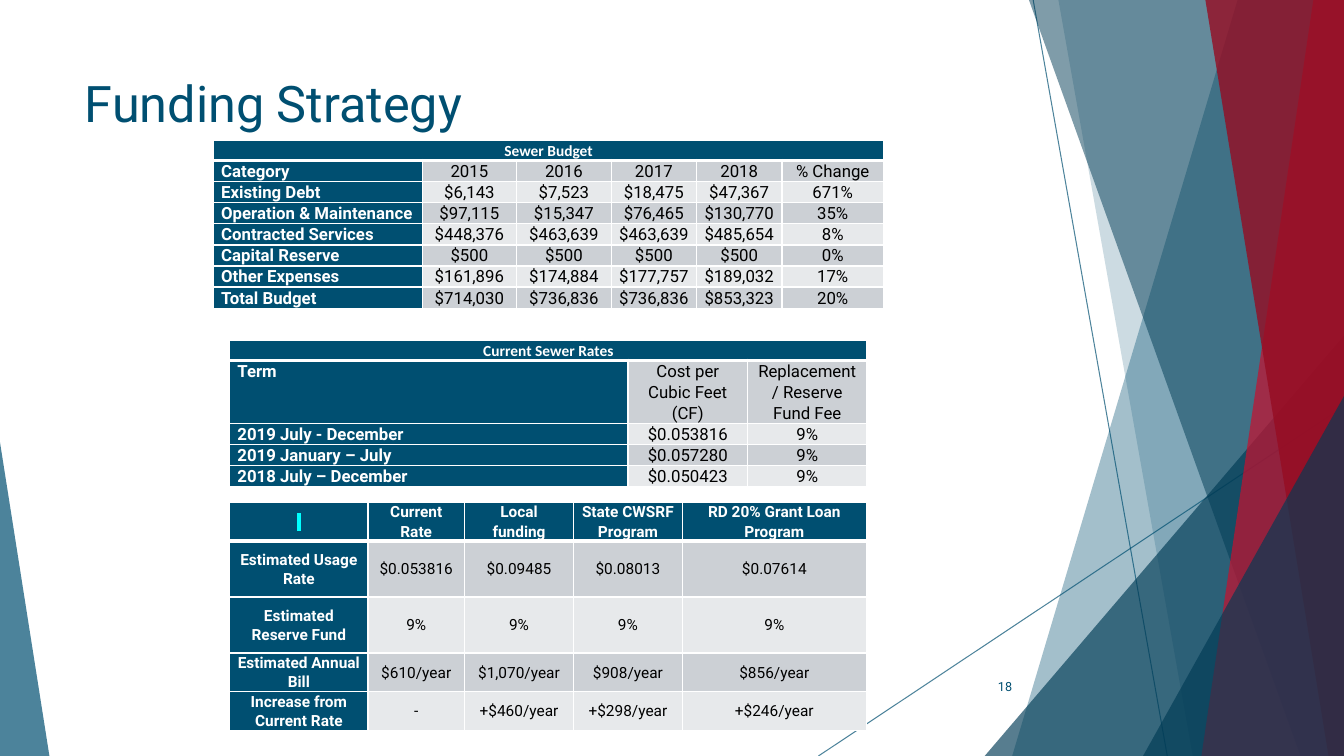
from lxml.etree import SubElement
from pptx import Presentation
from pptx.dml.color import RGBColor
from pptx.enum.shapes import MSO_CONNECTOR, MSO_SHAPE
from pptx.enum.text import MSO_ANCHOR, PP_ALIGN
from pptx.oxml.ns import qn
from pptx.util import Pt

COLORS = {
    "blue": "004F71", "navy": "003B55", "red": "C8102E", "crimson": "960C22",
    "white": "FFFFFF", "black": "000000", "gray": "CCD0D5", "pale": "E7E9EB",
    "cyan": "00FFFF",
}
WIDTH, HEIGHT = 960, 540

RIBBONS = [
    ([(161, 0), (237, 0), (237, 540), (0, 540)], 723, "blue", 36),
    ([(0, 0), (204, 0), (204, 540), (96, 540)], 756, "blue", 20),
    ((703.4, 239.8, 256.6, 300.2), 1, "navy", 66),
    ([(0, 0), (225, 0), (225, 540), (194.5, 540)], 735, "navy", 50),
    ([(80, 0), (101.8, 0), (101.8, 540), (0, 540)], 858.2, "red", 70),
    ([(0, 0), (99, 0), (99, 540), (88, 540)], 861, "crimson", 80),
    ((816.5, 283, 143.5, 257), 1, "navy", 66),
    ((0, 316, 35.3, 224), 0, "blue", 70),
]
RAYS = [((738, 0), (833.8, 540)), ((960, 290.2), (584.6, 540))]

BUDGET = [
    ["Sewer Budget"],
    ["Category", "2015", "2016", "2017", "2018", "% Change"],
    ["Existing Debt", "$6,143", "$7,523", "$18,475", "$47,367", "671%"],
    ["Operation & Maintenance", "$97,115", "$15,347", "$76,465", "$130,770", "35%"],
    ["Contracted Services", "$448,376", "$463,639", "$463,639", "$485,654", "8%"],
    ["Capital Reserve", "$500", "$500", "$500", "$500", "0%"],
    ["Other Expenses", "$161,896", "$174,884", "$177,757", "$189,032", "17%"],
    ["Total Budget", "$714,030", "$736,836", "$736,836", "$853,323", "20%"],
]
RATES = [
    ["Current Sewer Rates"],
    ["Term", "Cost per Cubic Feet (CF)", "Replacement/ Reserve Fund Fee"],
    ["2019 July - December", "$0.053816", "9%"],
    ["2019 January – July", "$0.057280", "9%"],
    ["2018 July – December", "$0.050423", "9%"],
]
OPTIONS = [
    [" ", "Current Rate", "Local funding", "State CWSRF Program",
     "RD 20% Grant Loan Program"],
    ["Estimated Usage Rate", "$0.053816", "$0.09485", "$0.08013", "$0.07614"],
    ["Estimated Reserve Fund", "9%", "9%", "9%", "9%"],
    ["Estimated Annual Bill", "$610/year", "$1,070/year", "$908/year", "$856/year"],
    ["Increase from Current Rate", "-", "+$460/year", "+$298/year", "+$246/year"],
]


def rgb(color):
    return RGBColor.from_string(COLORS[color])


def write(frame, text, size=12, font="Roboto", color="blue", bold=False,
          align=PP_ALIGN.LEFT, anchor=MSO_ANCHOR.TOP, spacing=None, highlight=None):
    frame.word_wrap = True
    frame.vertical_anchor = anchor
    paragraph = frame.paragraphs[0]
    paragraph.alignment = align
    if spacing:
        paragraph.line_spacing = spacing
    run = paragraph.add_run()
    run.text = text
    run.font.size = Pt(size)
    run.font.bold = bold
    run.font.color.rgb = rgb(color)
    if highlight:
        marker = SubElement(run.font._element, qn("a:highlight"))
        SubElement(marker, qn("a:srgbClr"), val=COLORS[highlight])
    run.font.name = font


def set_alpha(fill_owner, percent):
    tint = next(fill_owner.iter(qn("a:srgbClr")))
    SubElement(tint, qn("a:alpha"), val=str(percent * 1000))


def draw_backdrop(slide, left, top):
    for start, end in RAYS:
        ray = slide.shapes.add_connector(
            MSO_CONNECTOR.STRAIGHT, Pt(left + start[0]), Pt(top + start[1]),
            Pt(left + end[0]), Pt(top + end[1]))
        ray.line.color.rgb = rgb("blue")
        ray.line.width = Pt(0.75)
        set_alpha(ray._element.spPr, 70)
        SubElement(ray._element.spPr, qn("a:effectLst"))
    for outline, place, color, opacity in RIBBONS:
        if isinstance(outline, list):
            builder = slide.shapes.build_freeform(*outline[0], scale=Pt(1))
            builder.add_line_segments(outline[1:], close=True)
            ribbon = builder.convert_to_shape(Pt(left + place), Pt(top))
        else:
            x, y, width, height = outline
            ribbon = slide.shapes.add_shape(
                MSO_SHAPE.ISOSCELES_TRIANGLE, Pt(left + x), Pt(top + y),
                Pt(width), Pt(height))
            ribbon.adjustments[0] = place
        ribbon.shadow.inherit = False
        ribbon.line.fill.background()
        ribbon.fill.solid()
        ribbon.fill.fore_color.rgb = rgb(color)
        set_alpha(ribbon._element.spPr, opacity)


def place_title(slide, left, top, width, height):
    title = slide.shapes.title
    title.left, title.top = Pt(left), Pt(top)
    title.width, title.height = Pt(width), Pt(height)
    write(title.text_frame, "Funding Strategy", size=36)


def set_borders(cell, top, bottom):
    properties = cell._tc.get_or_add_tcPr()
    for side, weight in (("lnL", 1), ("lnR", 1), ("lnT", top), ("lnB", bottom)):
        border = SubElement(properties, qn(f"a:{side}"), w=str(Pt(weight)))
        fill = SubElement(border, qn("a:solidFill"))
        SubElement(fill, qn("a:srgbClr"), val=COLORS["white"])


def place_table(slide, left, top, widths, heights, rows, size=12,
                label_align=PP_ALIGN.LEFT, anchor=MSO_ANCHOR.TOP):
    table = slide.shapes.add_table(
        len(rows), len(widths), Pt(left), Pt(top),
        Pt(sum(widths)), Pt(sum(heights))).table
    for column, width in zip(table.columns, widths):
        column.width = Pt(width)
    for row, height in zip(table.rows, heights):
        row.height = Pt(height)
    banner = len(rows[0]) == 1
    if banner:
        table.cell(0, 0).merge(table.cell(0, len(widths) - 1))
    for r, entries in enumerate(rows):
        for c in range(len(widths)):
            cell = table.cell(r, c)
            heading = r == 0 or c == 0
            set_borders(cell, 3 if r == 1 else 1, 3 if r == 0 else 1)
            cell.fill.solid()
            cell.fill.fore_color.rgb = rgb(
                "blue" if heading else "gray" if r % 2 else "pale")
            cell.margin_left = cell.margin_right = Pt(5.4)
            cell.margin_top = cell.margin_bottom = 0
            cell.vertical_anchor = anchor
            if c >= len(entries):
                continue
            title_row = banner and r == 0
            write(cell.text_frame, entries[c],
                  size=11 if title_row else size,
                  font="Calibri" if title_row else "Roboto",
                  color="white" if heading else "black", bold=heading,
                  align=label_align if c == 0 and r > 0 else PP_ALIGN.CENTER,
                  anchor=None, spacing=1.07,
                  highlight="cyan" if entries[c] == " " else None)


def place_page_number(slide, left, top, width, height):
    number = slide.shapes.add_textbox(Pt(left), Pt(top), Pt(width), Pt(height))
    write(number.text_frame, "18", size=9, align=PP_ALIGN.RIGHT,
          anchor=MSO_ANCHOR.MIDDLE)


def main():
    deck = Presentation()
    deck.slide_width, deck.slide_height = Pt(WIDTH), Pt(HEIGHT)
    slide = deck.slides.add_slide(deck.slide_layouts[5])
    draw_backdrop(slide, 0, 0)
    place_title(slide, 53.3, 48, 676.8, 104)
    place_table(slide, 152.6, 100.2, [149, 67.5, 67.5, 61, 61, 72.6],
                [14.4] + [15] * 7, BUDGET)
    place_table(slide, 164.2, 243, [284.4, 85.4, 85.4],
                [14.4, 45] + [15] * 3, RATES)
    place_table(slide, 164.2, 358.8, [98.6, 69.1, 77.8, 77.8, 131.4],
                [27.6, 40, 40, 27.6, 27.6], OPTIONS, size=11,
                label_align=PP_ALIGN.CENTER, anchor=MSO_ANCHOR.MIDDLE)
    place_page_number(slide, 676, 476, 54, 28.8)
    deck.save("out.pptx")


if __name__ == "__main__":
    main()
